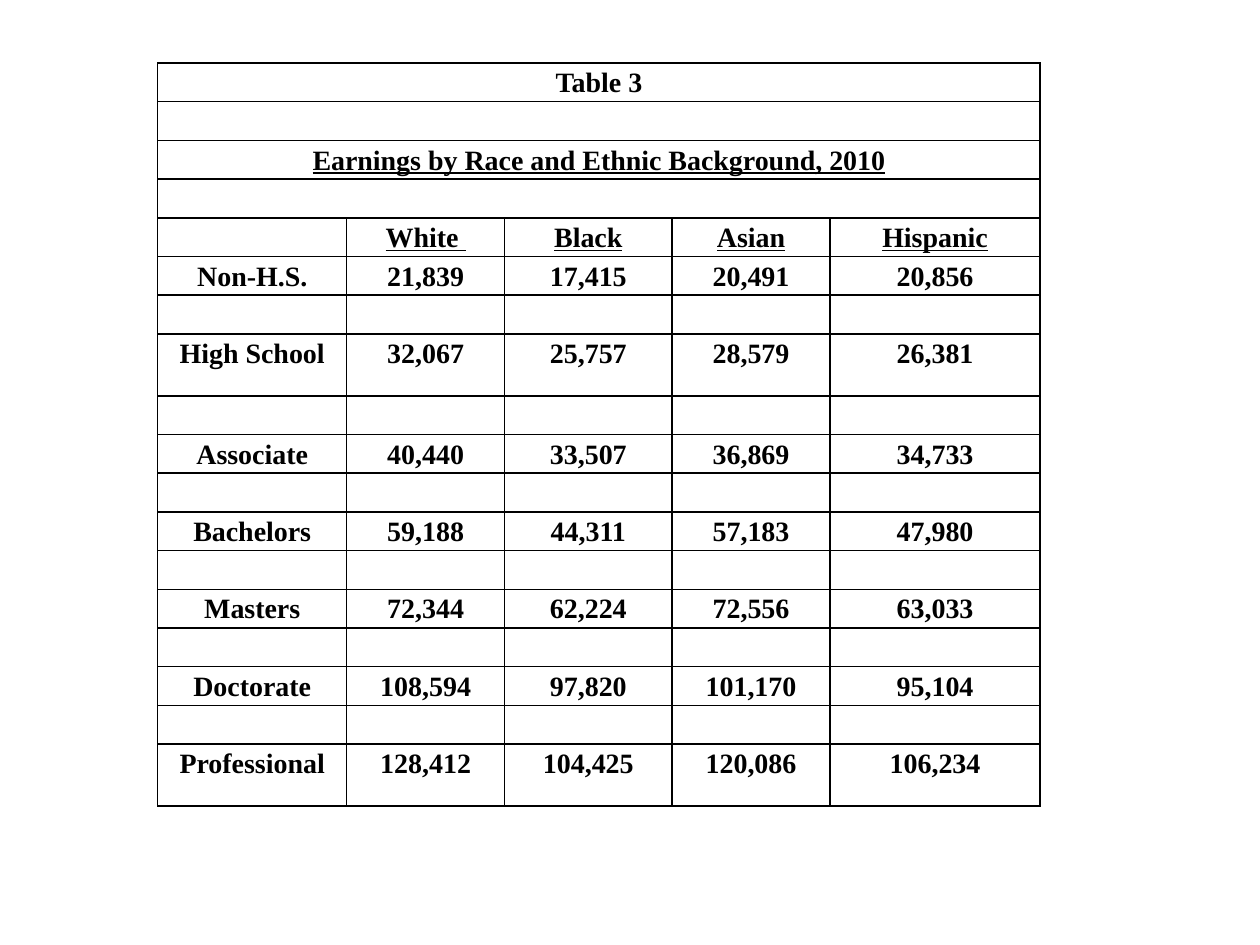
from lxml.etree import SubElement
from pptx import Presentation
from pptx.dml.color import RGBColor as RGB
from pptx.enum.text import PP_ALIGN as Align
from pptx.oxml.ns import qn
from pptx.util import Cm, Pt

COLORS = {"ink": "000000", "paper": "FFFFFF"}
FONT = "Times New Roman"
TITLES = ["Table 3", "Earnings by Race and Ethnic Background, 2010"]
GROUPS = ["", "White ", "Black", "Asian", "Hispanic"]
EARNINGS = [
    ["Non-H.S.", "21,839", "17,415", "20,491", "20,856"],
    ["High School", "32,067", "25,757", "28,579", "26,381"],
    ["Associate", "40,440", "33,507", "36,869", "34,733"],
    ["Bachelors", "59,188", "44,311", "57,183", "47,980"],
    ["Masters", "72,344", "62,224", "72,556", "63,033"],
    ["Doctorate", "108,594", "97,820", "101,170", "95,104"],
    ["Professional", "128,412", "104,425", "120,086", "106,234"],
]
TALL = {"High School", "Professional"}
UNDERLINED = {TITLES[1], *GROUPS}
COL_WIDTHS = [3.81, 3.18, 3.38, 3.18, 4.24]
ROW_H, TALL_H = 0.78, 1.25
LEFT, TOP = 3.18, 1.27


def layout_rows():
    blank = [""] * len(GROUPS)
    rows = []
    for title in TITLES:
        rows += [[title] + blank[1:], blank]
    rows.append(GROUPS)
    for i, record in enumerate(EARNINGS):
        rows += [blank, record] if i else [record]
    return rows


def add_borders(cell):
    tcPr = cell._tc.get_or_add_tcPr()
    for i, side in enumerate(("lnL", "lnR", "lnT", "lnB")):
        ln = tcPr.makeelement(qn(f"a:{side}"), {"w": str(Pt(1))})
        fill = SubElement(ln, qn("a:solidFill"))
        SubElement(fill, qn("a:srgbClr"), val=COLORS["ink"])
        tcPr.insert(i, ln)


def style_cell(cell, text):
    cell.margin_left = cell.margin_right = Cm(0.13)
    cell.margin_top = cell.margin_bottom = 0
    cell.fill.solid()
    cell.fill.fore_color.rgb = RGB.from_string(COLORS["paper"])
    add_borders(cell)
    p = cell.text_frame.paragraphs[0]
    p.alignment = Align.CENTER
    p.font.name, p.font.size, p.font.bold = FONT, Pt(16), True
    p.font.color.rgb = RGB.from_string(COLORS["ink"])
    if text:
        p.line_spacing = 1.15
        p.font.underline = text in UNDERLINED
        p.add_run().text = text


def main():
    prs = Presentation()
    prs.slide_width, prs.slide_height = Cm(25.4), Cm(19.05)
    s = prs.slides.add_slide(prs.slide_layouts[6])
    rows = layout_rows()
    heights = [TALL_H if row[0] in TALL else ROW_H for row in rows]
    table = s.shapes.add_table(
        len(rows), len(GROUPS), Cm(LEFT), Cm(TOP),
        Cm(sum(COL_WIDTHS)), Cm(sum(heights))).table
    table.first_row = table.horz_banding = False
    for col, width in zip(table.columns, COL_WIDTHS):
        col.width = Cm(width)
    for r, (row, height) in enumerate(zip(rows, heights)):
        table.rows[r].height = Cm(height)
        for c, text in enumerate(row):
            style_cell(table.cell(r, c), text)
    for r in range(2 * len(TITLES)):
        table.cell(r, 0).merge(table.cell(r, len(GROUPS) - 1))
    prs.save("out.pptx")


if __name__ == "__main__":
    main()
